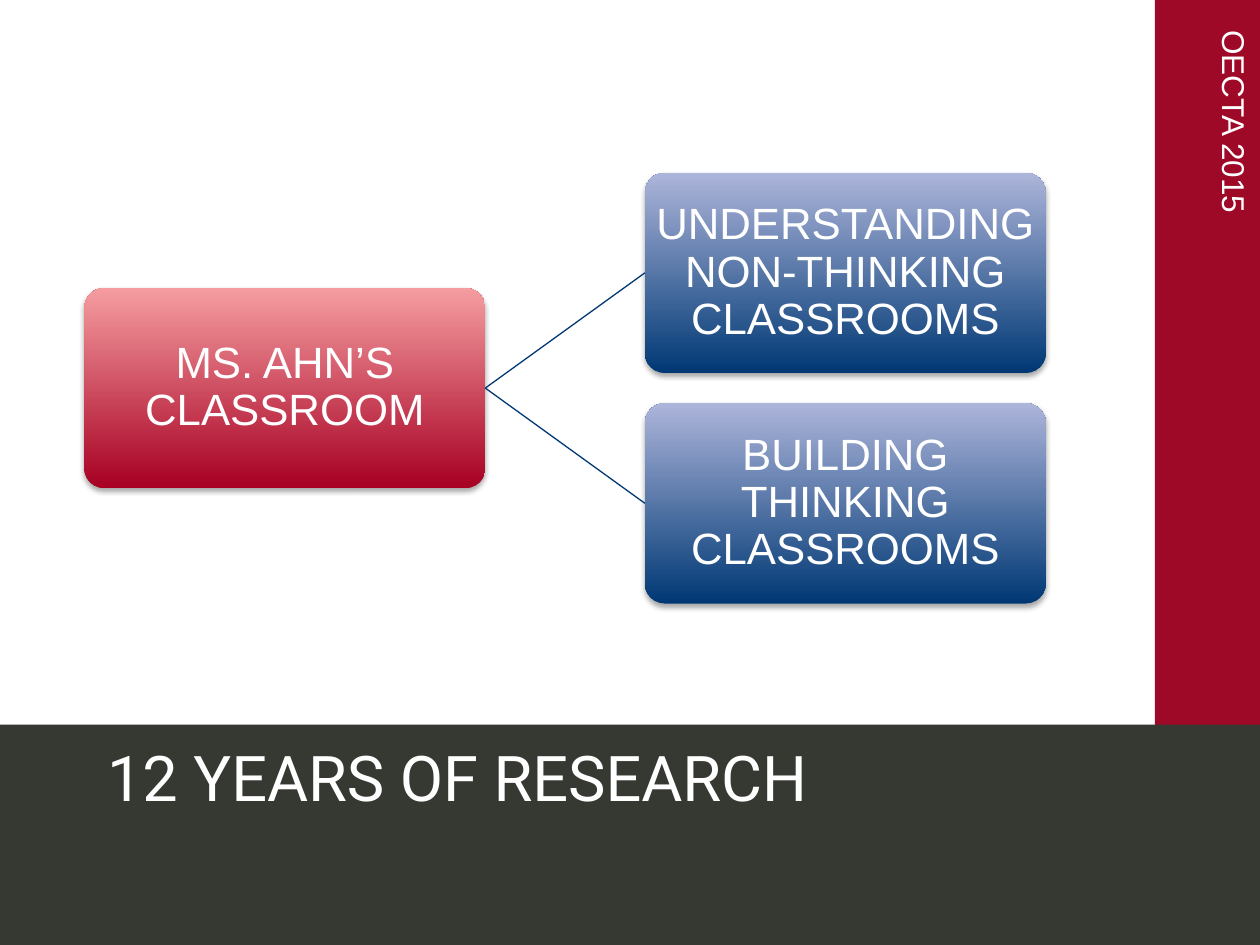
from lxml import etree
from pptx import Presentation
from pptx.dml.color import RGBColor
from pptx.enum.shapes import MSO_CONNECTOR, MSO_SHAPE
from pptx.enum.text import MSO_ANCHOR, PP_ALIGN
from pptx.oxml import parse_xml
from pptx.oxml.ns import qn
from pptx.util import Inches, Pt

RECT, ROUNDED = MSO_SHAPE.RECTANGLE, MSO_SHAPE.ROUNDED_RECTANGLE
STRAIGHT = MSO_CONNECTOR.STRAIGHT
MIDDLE = MSO_ANCHOR.MIDDLE
LEFT, CENTER = PP_ALIGN.LEFT, PP_ALIGN.CENTER
RIGHT_SIDE, LEFT_SIDE = 3, 1

WIDTH, HEIGHT = 10, 7.5
WHITE, CRIMSON, CHARCOAL, NAVY = "FFFFFF", "9E0927", "363832", "003874"
RED_FADE, BLUE_FADE = ("A70022", "F59DA1"), (NAVY, "ADB5DA")
SHADOW = (
    '<a:outerShdw xmlns:a="http://schemas.openxmlformats.org/drawingml/2006/main"'
    ' blurRad="39370" dist="22860" dir="5400000" rotWithShape="0">'
    '<a:srgbClr val="000000"><a:alpha val="35000"/></a:srgbClr></a:outerShdw>'
)


def color(hex_code):
    """Turn a hex string into a colour."""
    return RGBColor.from_string(hex_code)


def inches(*lengths):
    """Convert lengths in inches."""
    return [Inches(length) for length in lengths]


def set_text(shape, text, size, font, align):
    """Write one white paragraph into a shape and return it."""
    frame = shape.text_frame
    frame.word_wrap = True
    frame.vertical_anchor = MIDDLE
    frame.text = text
    paragraph = frame.paragraphs[0]
    paragraph.alignment = align
    paragraph.font.size = Pt(size)
    paragraph.font.name = font
    paragraph.font.color.rgb = color(WHITE)
    return paragraph


def add_band(slide, box, fill):
    """Add a plain coloured band."""
    band = slide.shapes.add_shape(RECT, *inches(*box))
    band.shadow.inherit = False
    band.fill.solid()
    band.fill.fore_color.rgb = color(fill)
    band.line.fill.background()


def add_event_label(slide, box, text):
    """Add the event name reading downwards along the side band."""
    left, top, width, height = box
    label = slide.shapes.add_textbox(*inches(
        left + (width - height) / 2, top + (height - width) / 2, height, width))
    label.rotation = 90
    label.text_frame.margin_left = Inches(0.24)
    set_text(label, text, 18, "Arial", LEFT)


def add_node(slide, box, text, fade):
    """Add a rounded box that fades from dark at the foot to light."""
    node = slide.shapes.add_shape(ROUNDED, *inches(*box))
    node.adjustments[0] = 0.1
    node.line.fill.background()
    node.fill.gradient()
    node.fill.gradient_angle = 90
    for stop, shade in zip(node.fill.gradient_stops, fade):
        stop.color.rgb = color(shade)
    node.shadow.inherit = False
    node.element.spPr.find(qn("a:effectLst")).append(parse_xml(SHADOW))
    frame = node.text_frame
    frame.margin_left = frame.margin_right = Inches(0.02)
    frame.margin_top = frame.margin_bottom = Inches(0.02)
    set_text(node, text, 25, "Arial", CENTER).line_spacing = 0.9
    return node


def add_branch(slide, parent, child):
    """Join the right side of a parent to the left side of a child."""
    branch = slide.shapes.add_connector(STRAIGHT, 0, 0, 0, 0)
    branch.begin_connect(parent, RIGHT_SIDE)
    branch.end_connect(child, LEFT_SIDE)
    branch.line.color.rgb = color(NAVY)
    branch.line.width = Pt(0.75)
    etree.SubElement(branch.element.spPr, qn("a:effectLst"))


def add_tree(slide, box, root_text, child_texts):
    """Place a root at the left and its children stacked at the right."""
    left, top, width, height = box
    node_width = width * 0.417
    node_height = node_width / 2
    pitch = (height - node_height) / (len(child_texts) - 1)
    root_top = top + (height - node_height) / 2
    root = add_node(slide, (left, root_top, node_width, node_height),
                    root_text, RED_FADE)
    for row, text in enumerate(child_texts):
        child_box = (left + width - node_width, top + row * pitch,
                     node_width, node_height)
        add_branch(slide, root, add_node(slide, child_box, text, BLUE_FADE))


def place_title(slide, box, text):
    """Bring the title placeholder to the front of the lower band."""
    title = slide.shapes.title
    title.left, title.top, title.width, title.height = inches(*box)
    set_text(title, text, 36, "Roboto", LEFT)
    slide.shapes.element.append(title.element)


def main():
    """Build the slide and save it."""
    deck = Presentation()
    deck.slide_width, deck.slide_height = inches(WIDTH, HEIGHT)
    slide = deck.slides.add_slide(deck.slide_layouts[5])
    side, foot = WIDTH * 11 / 12, 5.75
    add_band(slide, (side, 0, WIDTH - side, HEIGHT), CRIMSON)
    add_band(slide, (0, foot, WIDTH, HEIGHT - foot), CHARCOAL)
    add_event_label(slide, (9.6, 0, 0.4, 3.91), "OECTA 2015")
    add_tree(slide, (0.67, 1.37, 7.63, 3.42), "MS. AHN’S CLASSROOM",
             ["UNDERSTANDING NON-THINKING CLASSROOMS",
              "BUILDING THINKING CLASSROOMS"])
    place_title(slide, (0.75, foot, 8.92, 0.83), "12 YEARS OF RESEARCH")
    deck.save("out.pptx")


if __name__ == "__main__":
    main()
